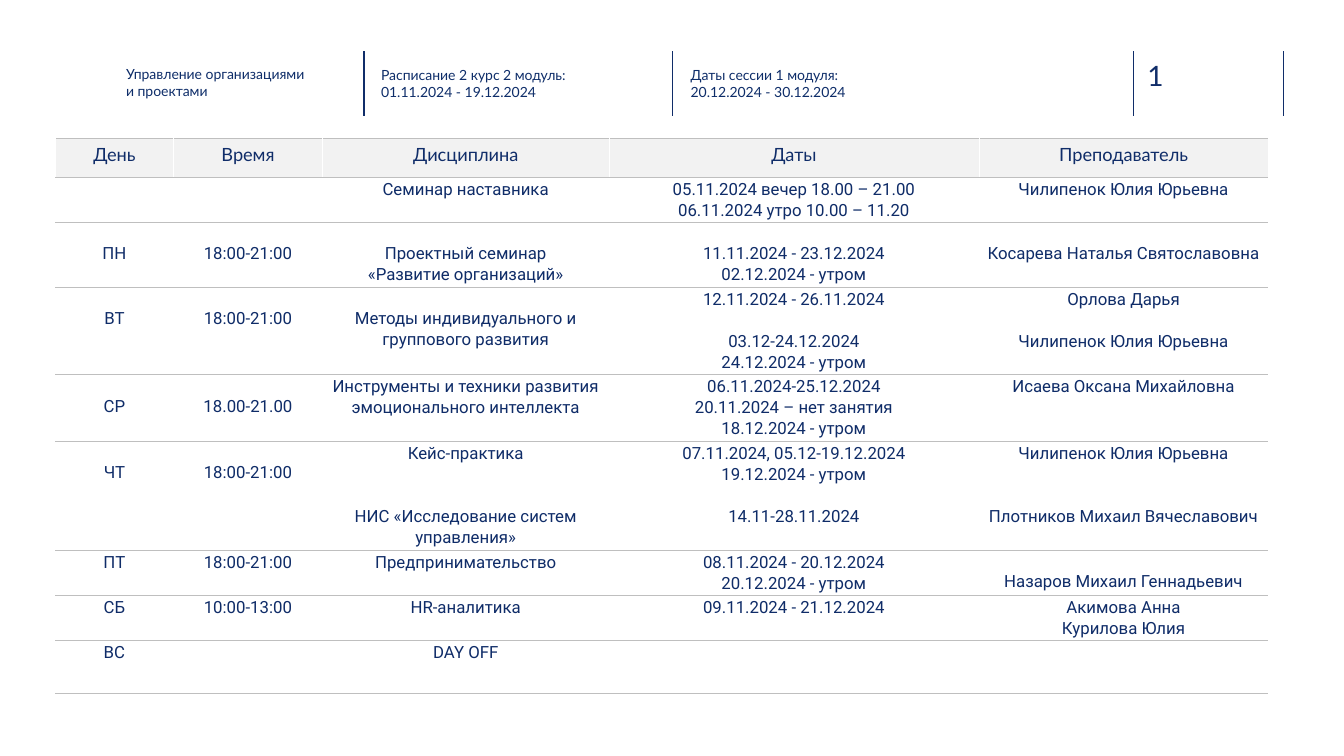
from lxml import etree
from pptx import Presentation
from pptx.dml.color import RGBColor
from pptx.enum import shapes, text
from pptx.oxml import ns
from pptx.util import Inches, Pt

NAVY = RGBColor(0x10, 0x2D, 0x69)
HEADER_INK = RGBColor(0x0E, 0x2D, 0x69)
BODY_INK = RGBColor(0x0F, 0x2C, 0x68)
HEADER_FILL = RGBColor(0xF2, 0xF2, 0xF2)
GREY = RGBColor(0xBF, 0xBF, 0xBF)
WHITE = RGBColor(0xFF, 0xFF, 0xFF)

BORDERS = {"lnL": (WHITE, 0.25), "lnR": (WHITE, 0.25),
           "lnT": (GREY, 0.75), "lnB": (GREY, 0.75)}
DIVIDERS = [3.61, 6.67, 11.24, 12.73]
CAPTIONS = [
    (1.25, 0.59, 2.08, "Управление организациями\vи проектами"),
    (3.78, 0.6, 2.26, "Расписание 2 курс 2 модуль:\v01.11.2024 - 19.12.2024"),
    (6.85, 0.6, 3.36, "Даты сессии 1 модуля:\n20.12.2024 - 30.12.2024"),
]
COL_WIDTHS = [1.17, 1.48, 2.84, 3.67, 2.87]
ROW_HEIGHTS = [0.39, 0.45, 0.64, 0.86, 0.65, 1.07, 0.45, 0.45, 0.52]
SCHEDULE = [
    ["День", "Время", "Дисциплина", "Даты", "Преподаватель"],
    ["", "", "Семинар наставника",
     "05.11.2024 вечер 18.00 – 21.00\n06.11.2024 утро 10.00 – 11.20",
     "Чилипенок Юлия Юрьевна"],
    ["\nПН", "\n18:00-21:00", "\nПроектный семинар\n«Развитие организаций»",
     "\n11.11.2024 - 23.12.2024\n02.12.2024 - утром",
     "\nКосарева Наталья Святославовна"],
    ["\nВТ", "\n18:00-21:00", "\nМетоды индивидуального и группового развития",
     "12.11.2024 - 26.11.2024\n\n03.12-24.12.2024\n24.12.2024 - утром",
     "Орлова Дарья\n\nЧилипенок Юлия Юрьевна"],
    ["\nСР", "\n18.00-21.00",
     "Инструменты и техники развития эмоционального интеллекта",
     "06.11.2024-25.12.2024\n20.11.2024 – нет занятия\n18.12.2024 - утром",
     "Исаева Оксана Михайловна"],
    ["\nЧТ", "\n18:00-21:00",
     "Кейс-практика\n\n\nНИС «Исследование систем управления»",
     "07.11.2024, 05.12-19.12.2024\n19.12.2024 - утром\n\n14.11-28.11.2024",
     "Чилипенок Юлия Юрьевна\n\n\nПлотников Михаил Вячеславович"],
    ["ПТ", "18:00-21:00", "Предпринимательство",
     "08.11.2024 - 20.12.2024\n20.12.2024 - утром",
     "\nНазаров Михаил Геннадьевич"],
    ["СБ", "10:00-13:00", "HR-аналитика", "09.11.2024 - 21.12.2024",
     "Акимова Анна\nКурилова Юлия"],
    ["ВС", "", "DAY OFF", "", ""],
]


def set_attrs(obj, values):
    """Set every attribute named in a dict of format values."""
    for name, value in values.items():
        setattr(obj, name, value)


def set_font(p, name, size, color):
    """Give a paragraph and its runs one font."""
    for font in [p.font] + [r.font for r in p.runs]:
        set_attrs(font, {"name": name, "size": Pt(size)})
        font.color.rgb = color


def add_divider(s, x, y, height):
    """Draw a vertical divider down from a point."""
    line = s.shapes.add_connector(shapes.MSO_CONNECTOR.STRAIGHT, Inches(x),
                                  Inches(y), Inches(x), Inches(y + height))
    line.line.color.rgb = NAVY
    line.line.width = Pt(1)
    etree.SubElement(line._element.spPr, ns.qn("a:effectLst"))


def add_caption(s, left, top, width, height, words, size, color):
    """Place vertically centred text without insets in a box."""
    box = s.shapes.add_textbox(*map(Inches, (left, top, width, height)))
    tf = box.text_frame
    set_attrs(tf, {"margin_left": 0, "margin_right": 0, "margin_top": 0,
                   "margin_bottom": 0, "word_wrap": True,
                   "vertical_anchor": text.MSO_ANCHOR.MIDDLE})
    tf.text = words
    for p in tf.paragraphs:
        set_font(p, "Lato", size, color)


def add_header(s, top):
    """Build the strip of captions, dividers and the page number."""
    for x in DIVIDERS:
        add_divider(s, x, top, 0.64)
    for left, y, width, words in CAPTIONS:
        add_caption(s, left, y, width, 0.45, words, 10, HEADER_INK)
    add_caption(s, 11.38, top + 0.07, 0.73, 0.34, "1", 20, NAVY)


def set_borders(cell):
    """Draw the four borders of a table cell."""
    tc_pr = cell._tc.get_or_add_tcPr()
    for side, (color, width) in BORDERS.items():
        ln = etree.SubElement(tc_pr, ns.qn("a:" + side), w=str(Pt(width)))
        fill = etree.SubElement(ln, ns.qn("a:solidFill"))
        etree.SubElement(fill, ns.qn("a:srgbClr"), val=str(color))


def fill_header_cell(cell, words):
    """Write a column title on a shaded cell."""
    cell.fill.solid()
    cell.fill.fore_color.rgb = HEADER_FILL
    cell.text = words
    p = cell.text_frame.paragraphs[0]
    p.alignment = text.PP_ALIGN.CENTER
    set_font(p, "Lato", 13, NAVY)


def fill_body_cell(cell, words):
    """Write lines in a cell, turning empty lines into spacing."""
    cell.fill.background()
    lines = words.lstrip("\n")
    lead = 0.19 * (len(words) - len(lines))
    set_attrs(cell, {"margin_left": Inches(0.01), "margin_right": Inches(0.01),
                     "margin_top": Inches(0.01 + lead),
                     "margin_bottom": Inches(0.01)})
    tf = cell.text_frame
    p, gap = tf.paragraphs[0], 0
    for i, line in enumerate(lines.split("\n")):
        if i and not line:
            gap += 15
            continue
        if i:
            p = tf.add_paragraph()
        p.text = line
        set_attrs(p, {"alignment": text.PP_ALIGN.CENTER, "line_spacing": 1.07})
        if gap:
            p.space_before = Pt(gap)
        gap = 0
        set_font(p, "Roboto", 12, BODY_INK)


def add_schedule(s, left, top):
    """Build the timetable from its top left corner."""
    frame = s.shapes.add_table(len(SCHEDULE), len(COL_WIDTHS), Inches(left),
                               Inches(top), Inches(sum(COL_WIDTHS)),
                               Inches(sum(ROW_HEIGHTS)))
    table = frame.table
    set_attrs(table, {"first_row": False, "horz_banding": False})
    for column, width in zip(table.columns, COL_WIDTHS):
        column.width = Inches(width)
    for row, height in zip(table.rows, ROW_HEIGHTS):
        row.height = Inches(height)
    for i, entries in enumerate(SCHEDULE):
        for j, words in enumerate(entries):
            cell = table.cell(i, j)
            set_borders(cell)
            fill_cell = fill_body_cell if i else fill_header_cell
            fill_cell(cell, words)


def main():
    """Build and save the timetable slide."""
    prs = Presentation()
    set_attrs(prs, {"slide_width": Inches(13.33), "slide_height": Inches(7.5)})
    s = prs.slides.add_slide(prs.slide_layouts[6])
    add_header(s, 0.51)
    add_schedule(s, 0.55, 1.37)
    prs.save("out.pptx")


if __name__ == "__main__":
    main()
